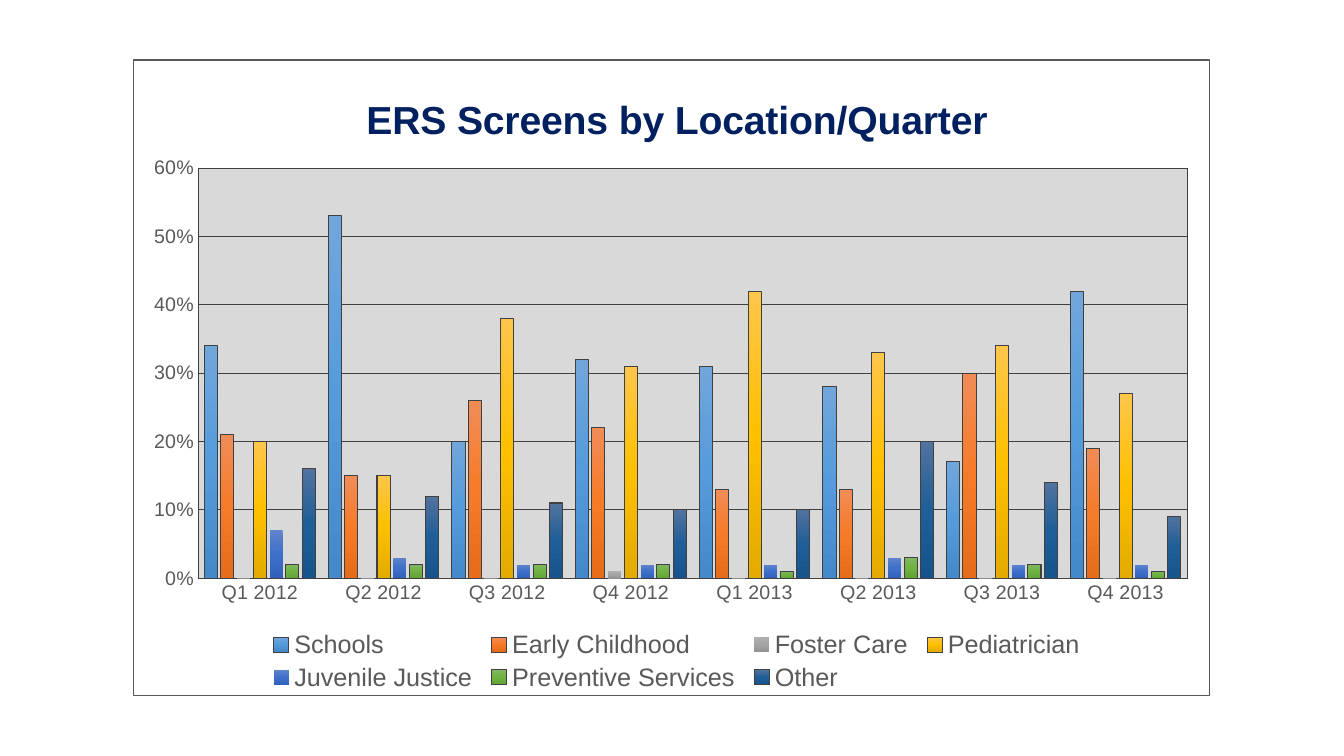
from typing import NamedTuple
from copy import deepcopy

from lxml import etree
from pptx import Presentation
from pptx.chart.data import CategoryChartData
from pptx.dml.color import RGBColor
from pptx.enum.chart import XL_CHART_TYPE, XL_LEGEND_POSITION, XL_TICK_MARK
from pptx.oxml import parse_xml
from pptx.oxml.ns import nsdecls, qn
from pptx.util import Pt

COLUMNS = XL_CHART_TYPE.COLUMN_CLUSTERED
BOTTOM = XL_LEGEND_POSITION.BOTTOM
NO_TICK = XL_TICK_MARK.NONE
FONT, INK, EDGE = "Arial", "595959", "404040"


class Place(NamedTuple):
    name: str
    shares: tuple[int, ...]  # percent per quarter
    shades: tuple[str, str, str]  # top, middle, bottom
    lined: bool = True


PLACES = (
    Place("Schools", (34, 53, 20, 32, 31, 28, 17, 42), ("71A6DB", "559BDB", "448ACA")),
    Place("Early Childhood", (21, 15, 26, 22, 13, 13, 30, 19),
          ("F18C57", "F67B28", "E56C19")),
    Place("Foster Care", (0, 0, 0, 1, 0, 0, 0, 0),
          ("AFAFAF", "A5A5A5", "939393"), False),
    Place("Pediatrician", (20, 15, 38, 31, 42, 33, 34, 27),
          ("FFC64B", "FFC000", "E3AB00")),
    Place("Juvenile Justice", (7, 3, 2, 2, 2, 3, 2, 2),
          ("6183CB", "3E70CA", "3062BB"), False),
    Place("Preventive Services", (2, 2, 2, 2, 1, 3, 2, 1),
          ("81B861", "6FB242", "62A336")),
    Place("Other", (16, 12, 11, 10, 10, 20, 14, 9), ("51739F", "205E97", "17548B")),
)


def paint(color, code: str) -> None:
    color.rgb = RGBColor.from_string(code)


def style(font, size: float, code: str = INK, name: str = FONT,
          bold: bool = False) -> None:
    font.name, font.size, font.bold = name, Pt(size), bold
    paint(font.color, code)


def draw_line(line, code: str, width: float) -> None:
    line.width = Pt(width)
    paint(line.color, code)


def frame(fill: str, edge: str) -> etree._Element:
    """Shape properties for a filled box with a thin edge."""
    return parse_xml(
        f'<c:spPr {nsdecls("c", "a")}>'
        f'<a:solidFill><a:srgbClr val="{fill}"/></a:solidFill>'
        f'<a:ln w="{Pt(0.75)}"><a:solidFill><a:srgbClr val="{edge}"/></a:solidFill>'
        '</a:ln></c:spPr>')


def lay_out(part: etree._Element, index: int, inner: bool = False,
            **box: float) -> None:
    """Place a chart part by fractions of the chart's size."""
    for old in part.findall(qn("c:layout")):
        part.remove(old)
    target = '<c:layoutTarget val="inner"/>' if inner else ""
    modes = '<c:xMode val="edge"/><c:yMode val="edge"/>'
    sides = "".join(f'<c:{key} val="{size}"/>' for key, size in box.items())
    part.insert(index, parse_xml(
        f'<c:layout {nsdecls("c")}><c:manualLayout>{target}{modes}{sides}'
        '</c:manualLayout></c:layout>'))


def shade(series, place: Place) -> None:
    fill = series.format.fill
    fill.gradient()
    fill.gradient_angle = 270
    stops = series._element.find(".//" + qn("a:gsLst"))
    stops.append(deepcopy(stops[0]))
    for i, (stop, code) in enumerate(zip(fill.gradient_stops, place.shades)):
        stop.position = i / 2
        paint(stop.color, code)
    if place.lined:
        draw_line(series.format.line, EDGE, 0.75)
    else:
        series.format.line.fill.background()


def add_columns(slide):
    data = CategoryChartData(number_format="0%")
    data.categories = [f"Q{q} {year}" for year in (2012, 2013) for q in range(1, 5)]
    for place in PLACES:
        data.add_series(place.name, [share / 100 for share in place.shares])
    chart = slide.shapes.add_chart(
        COLUMNS, Pt(95), Pt(42.5), Pt(769), Pt(455), data).chart
    style(chart.font, 10, "000000", "Calibri")
    plot = chart.plots[0]
    plot.gap_width, plot.overlap, plot.vary_by_categories = 100, -24, False
    for series, place in zip(plot.series, PLACES):
        shade(series, place)
    return chart


def set_axes(chart) -> None:
    cats, vals = chart.category_axis, chart.value_axis
    for axis in (cats, vals):
        axis.major_tick_mark = axis.minor_tick_mark = NO_TICK
        style(axis.tick_labels.font, 14)
    draw_line(cats.format.line, EDGE, 1)
    vals.format.line.fill.background()
    vals.minimum_scale, vals.maximum_scale, vals.major_unit = 0, 0.6, 0.1
    vals.tick_labels.number_format = "0%"
    vals.tick_labels.number_format_is_linked = False
    vals.has_major_gridlines = True
    draw_line(vals.major_gridlines.format.line, EDGE, 0.75)


def set_parts(chart) -> None:
    # Title
    chart.has_title = True
    title = chart.chart_title
    run = title.text_frame.paragraphs[0].add_run()
    run.text = "ERS Screens by Location/Quarter"
    style(run.font, 28, "002060", bold=True)
    title.include_in_layout = False
    lay_out(title._element, 1, x=0.21, y=0.045)

    # Legend
    chart.has_legend = True
    legend = chart.legend
    legend.position, legend.include_in_layout = BOTTOM, False
    style(legend.font, 18)
    lay_out(legend._element, 1, x=0.12, y=0.89, w=0.77, h=0.11)

    # Plot area and outer border
    space = chart._chartSpace
    area = space.chart.plotArea
    lay_out(area, 0, inner=True, x=0.06, y=0.17, w=0.92, h=0.645)
    area.append(frame("D9D9D9", EDGE))
    space.chart.addnext(frame("FFFFFF", INK))


def main() -> None:
    deck = Presentation()
    deck.slide_width, deck.slide_height = Pt(960), Pt(540)
    slide = deck.slides.add_slide(deck.slide_layouts[6])
    chart = add_columns(slide)
    set_axes(chart)
    set_parts(chart)
    deck.save("out.pptx")


if __name__ == "__main__":
    main()
